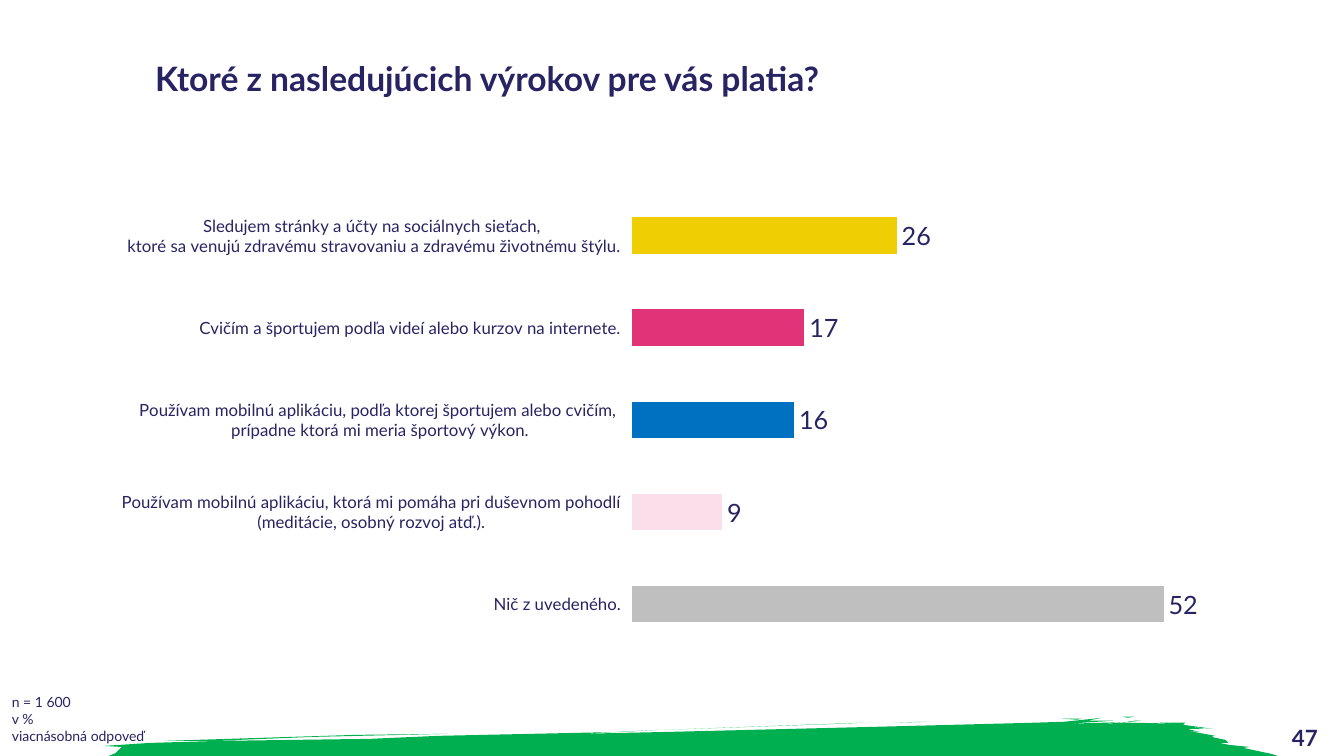
from lxml import etree
from pptx import Presentation
from pptx.chart.data import CategoryChartData
from pptx.dml.color import RGBColor
from pptx.enum.chart import XL_CHART_TYPE as ChartType, XL_LABEL_POSITION as LabelPosition
from pptx.enum.chart import XL_TICK_MARK as TickMark
from pptx.enum.text import MSO_ANCHOR as Anchor, PP_ALIGN as Align
from pptx.oxml.ns import qn
from pptx.util import Cm, Pt

NAVY = RGBColor(0x28, 0x24, 0x63)
GREEN = RGBColor(0x00, 0xB0, 0x50)
WHITE = RGBColor(0xFF, 0xFF, 0xFF)
YELLOW = RGBColor(0xEF, 0xCE, 0x03)
PINK = RGBColor(0xE1, 0x33, 0x77)
BLUE = RGBColor(0x00, 0x70, 0xC0)
PALE_PINK = RGBColor(0xFA, 0xDE, 0xE9)
GREY = RGBColor(0xBF, 0xBF, 0xBF)
FONT = "Lato"

# Statement, share of answers in %, bar colour
ANSWERS = [
    ("Sledujem stránky a účty na sociálnych sieťach, \n"
     "ktoré sa venujú zdravému stravovaniu a zdravému životnému štýlu.", 26, YELLOW),
    ("Cvičím a športujem podľa videí alebo kurzov na internete.", 17, PINK),
    ("Používam mobilnú aplikáciu, podľa ktorej športujem alebo cvičím, \n"
     "prípadne ktorá mi meria športový výkon.", 16, BLUE),
    ("Používam mobilnú aplikáciu, ktorá mi pomáha pri duševnom pohodlí "
     "(meditácie, osobný rozvoj atď.).", 9, PALE_PINK),
    ("Nič z uvedeného.", 52, GREY),
]

# Brush stroke: the body first, then loose flecks, in units of BRUSH_UNIT
BRUSH_UNIT = Cm(0.0254)
BRUSH_CONTOURS = [
    [(31, 36), (24, 39), (0, 41), (21, 42), (31, 44), (20, 44), (32, 44), (29, 50),
     (51, 50), (49, 53), (52, 58), (46, 62), (60, 63), (68, 66), (89, 70), (80, 73),
     (95, 75), (193, 76), (193, 79), (320, 76), (480, 73), (640, 69), (744, 66),
     (836, 63), (930, 60), (1041, 59), (1069, 58), (1099, 55), (1137, 51), (1159, 53),
     (1153, 49), (1176, 48), (1158, 43), (1171, 42), (1184, 39), (1178, 37),
     (1150, 31), (1156, 30), (1136, 28), (1126, 26), (1135, 26), (1132, 23),
     (1118, 20), (1122, 19), (1106, 16), (1094, 14), (1106, 15), (1094, 12),
     (1110, 12), (1094, 10), (1119, 12), (1090, 8), (1092, 6), (1067, 6), (1086, 7),
     (1042, 6), (999, 7), (1044, 5), (975, 7), (1021, 4), (995, 4), (1010, 1),
     (1001, 2), (972, 5), (941, 6), (785, 10), (582, 15), (491, 17), (570, 13),
     (535, 15), (351, 19), (283, 22), (134, 24), (65, 26), (19, 29), (37, 30)],
    [(270, 18), (79, 24), (128, 24), (227, 20), (361, 17)],
    [(751, 7), (772, 6), (576, 13)],
    [(1030, 0), (1042, 0), (1035, 1)],
    [(970, 2), (989, 2), (985, 3)],
    [(803, 6), (830, 5), (839, 5)],
    [(1034, 5), (1048, 4), (1042, 4)],
]


def style_font(font, size, bold=False):
    font.name, font.size, font.bold = FONT, Pt(size), bold
    font.color.rgb = NAVY


def add_text(slide, box, lines, size, bold=False, align=Align.LEFT, anchor=Anchor.TOP):
    frame = slide.shapes.add_textbox(*box).text_frame
    frame.word_wrap = True
    frame.vertical_anchor = anchor
    frame.text = "\n".join(lines)
    for paragraph in frame.paragraphs:
        paragraph.alignment = align
        style_font(paragraph.font, size, bold)
    return frame


def add_title(slide, box, text):
    frame = add_text(slide, box, [text], 24, bold=True, anchor=Anchor.MIDDLE)
    frame.paragraphs[0].line_spacing = 1.07
    frame.paragraphs[0].space_after = Pt(8)


def add_brush_stroke(slide, left, top):
    body, *flecks = BRUSH_CONTOURS
    builder = slide.shapes.build_freeform(*body[0], scale=BRUSH_UNIT)
    builder.add_line_segments(body[1:], close=True)
    for fleck in flecks:
        builder.move_to(*fleck[0])
        builder.add_line_segments(fleck[1:], close=True)
    shape = builder.convert_to_shape(left, top)
    shape.shadow.inherit = False
    shape.fill.solid()
    shape.fill.fore_color.rgb = GREEN
    shape.line.fill.background()


def set_plot_layout(chart, **place):
    """Fix the inner plot area as fractions of the chart."""
    plot_area = chart.plots[0]._element.getparent()
    layout = plot_area.find(qn("c:layout"))
    if layout is None:
        layout = etree.Element(qn("c:layout"))
        plot_area.insert(0, layout)
    manual = etree.SubElement(layout, qn("c:manualLayout"))
    settings = {"layoutTarget": "inner", "xMode": "edge", "yMode": "edge", **place}
    for name, value in settings.items():
        etree.SubElement(manual, qn(f"c:{name}")).set("val", str(value))


def add_answer_chart(slide, box):
    statements, shares, colours = zip(*ANSWERS)
    data = CategoryChartData(number_format="0")
    data.categories = statements
    data.add_series("Series 1", shares)
    chart = slide.shapes.add_chart(ChartType.BAR_CLUSTERED, *box, data).chart
    chart.has_legend = False
    chart.has_title = False
    chart.font.name, chart.font.size = "Calibri", Pt(10)
    chart.font.color.rgb = NAVY
    set_plot_layout(chart, x=0.466, y=0.023, w=0.534, h=0.971)

    # Axes
    category_axis, value_axis = chart.category_axis, chart.value_axis
    category_axis.reverse_order = True
    category_axis.major_tick_mark = TickMark.OUTSIDE
    category_axis.format.line.fill.background()
    style_font(category_axis.tick_labels.font, 12)
    value_axis.visible = False
    value_axis.has_major_gridlines = False
    value_axis.minimum_scale, value_axis.maximum_scale = 0, 60

    # Bars
    plot = chart.plots[0]
    plot.vary_by_categories = False
    plot.gap_width, plot.overlap = 139, 21
    series = plot.series[0]
    series.format.fill.solid()
    series.format.fill.fore_color.rgb = GREEN
    for index, colour in enumerate(colours):
        bar = series.points[index].format
        bar.fill.solid()
        bar.fill.fore_color.rgb = colour
        bar.line.color.rgb = WHITE
        bar.line.width = Pt(1.5)

    # Value labels
    labels = series.data_labels
    labels.show_value = True
    labels.position = LabelPosition.OUTSIDE_END
    labels.number_format, labels.number_format_is_linked = "#,##0", False
    style_font(labels.font, 18)


def main():
    presentation = Presentation()
    presentation.slide_width, presentation.slide_height = Cm(33.87), Cm(19.05)
    slide = presentation.slides.add_slide(presentation.slide_layouts[6])

    add_title(slide, (Cm(3.66), Cm(0.61), Cm(28.55), Cm(2.64)),
              "Ktoré z nasledujúcich výrokov pre vás platia?")
    add_text(slide, (Cm(31.9), Cm(18.14), Cm(1.97), Cm(0.91)), ["47"], 16,
             bold=True, align=Align.CENTER, anchor=Anchor.MIDDLE)
    add_brush_stroke(slide, Cm(2.13), Cm(18.06))
    add_text(slide, (Cm(0.05), Cm(17.35), Cm(4.04), Cm(1.55)),
             ["n = 1 600", "v %", "viacnásobná odpoveď"], 10)
    add_answer_chart(slide, (Cm(2.36), Cm(4.5), Cm(29.06), Cm(11.96)))

    presentation.save("out.pptx")


if __name__ == "__main__":
    main()
